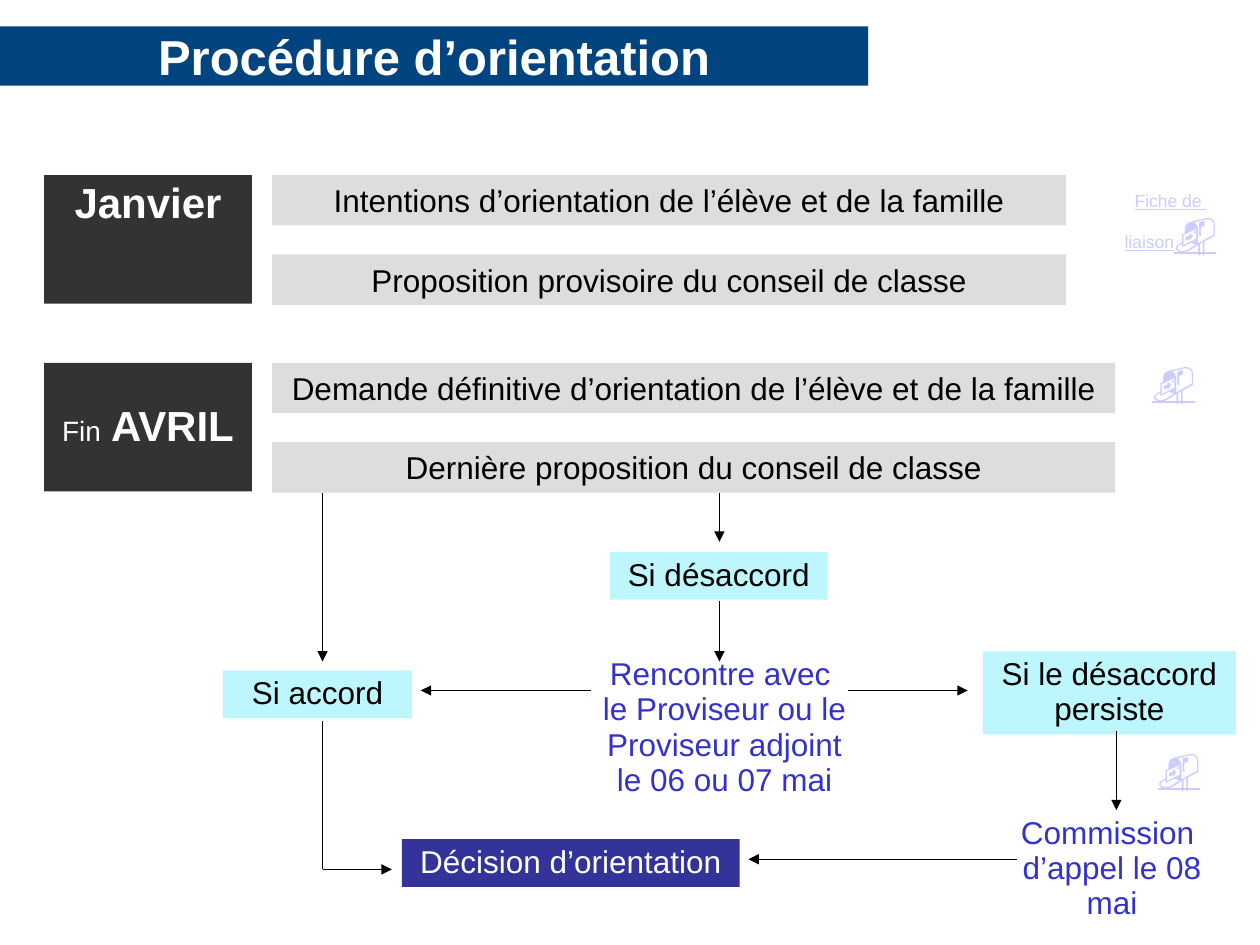
from dataclasses import dataclass
from typing import Optional

import lxml.etree
import pptx
import pptx.dml.color
import pptx.enum.shapes
import pptx.enum.text
import pptx.oxml.ns
import pptx.util

Inches = pptx.util.Inches
Anchor = pptx.enum.text.MSO_ANCHOR


@dataclass(frozen=True)
class Theme:
    font: str = "Arial"
    white: str = "FFFFFF"
    black: str = "000000"
    banner: str = "024480"
    period: str = "333333"
    step: str = "DDDDDD"
    condition: str = "BEF6FE"
    decision: str = "333399"
    meeting: str = "3333CC"
    mail: str = "CCCCFF"
    title_size: int = 28
    large: int = 24
    body: int = 18
    medium: int = 16
    small: int = 10
    line_width: float = 0.75
    tight: float = 0.93


THEME = Theme()


@dataclass(frozen=True)
class Run:
    text: str
    size: int = THEME.body
    color: str = THEME.black
    bold: bool = False
    underline: bool = False


@dataclass(frozen=True)
class Box:
    left: float
    top: float
    width: float
    height: float
    runs: tuple[Run, ...]
    fill: Optional[str] = None
    spacing: float = THEME.tight
    anchor: Anchor = Anchor.TOP


@dataclass(frozen=True)
class Link:
    start: tuple[float, float]
    end: tuple[float, float]
    arrow: bool = True


def rgb(color: str) -> pptx.dml.color.RGBColor:
    return pptx.dml.color.RGBColor.from_string(color)


def write_runs(shape, box: Box) -> None:
    frame = shape.text_frame
    frame.word_wrap = True
    frame.auto_size = pptx.enum.text.MSO_AUTO_SIZE.NONE
    frame.vertical_anchor = box.anchor
    frame.margin_left = frame.margin_right = Inches(0.1)
    frame.margin_top = frame.margin_bottom = Inches(0.05)
    paragraph = frame.paragraphs[0]
    paragraph.alignment = pptx.enum.text.PP_ALIGN.CENTER
    paragraph.line_spacing = box.spacing
    paragraph.space_before = pptx.util.Pt(0)
    for item in box.runs:
        for index, line in enumerate(item.text.split("\n")):
            if index:
                paragraph.add_line_break()
            run = paragraph.add_run()
            run.text = line
            font = run.font
            font.name = THEME.font
            font.size = pptx.util.Pt(item.size)
            font.bold = item.bold
            font.underline = item.underline
            font.color.rgb = rgb(item.color)


def place_title(slide, box: Box) -> None:
    title = slide.shapes.title
    title.left, title.top = Inches(box.left), Inches(box.top)
    title.width, title.height = Inches(box.width), Inches(box.height)
    title.fill.solid()
    title.fill.fore_color.rgb = rgb(box.fill)
    write_runs(title, box)


def draw_box(slide, box: Box) -> None:
    area = [Inches(value) for value in (box.left, box.top, box.width, box.height)]
    if box.fill is None:
        shape = slide.shapes.add_textbox(*area)
    else:
        shape = slide.shapes.add_shape(pptx.enum.shapes.MSO_SHAPE.RECTANGLE, *area)
        shape.shadow.inherit = False
        shape.fill.solid()
        shape.fill.fore_color.rgb = rgb(box.fill)
        shape.line.fill.background()
    write_runs(shape, box)


def draw_link(slide, link: Link) -> None:
    points = [Inches(value) for value in link.start + link.end]
    connector = slide.shapes.add_connector(
        pptx.enum.shapes.MSO_CONNECTOR.STRAIGHT, *points)
    connector.line.color.rgb = rgb(THEME.black)
    connector.line.width = pptx.util.Pt(THEME.line_width)
    if link.arrow:
        lxml.etree.SubElement(connector.line._get_or_add_ln(),
                              pptx.oxml.ns.qn("a:tailEnd"), type="triangle")
    lxml.etree.SubElement(connector._element.spPr, pptx.oxml.ns.qn("a:effectLst"))


def step(top: float, width: float, text: str) -> Box:
    return Box(2.16, top, width, 0.4, (Run(text),), THEME.step, spacing=1.0)


def period(top: float, anchor: Anchor, *runs: Run) -> Box:
    return Box(0.35, top, 1.65, 1.02, runs, THEME.period, anchor=anchor)


def condition(left: float, top: float, width: float, text: str,
              height: float = 0.38) -> Box:
    return Box(left, top, width, height, (Run(text),), THEME.condition)


def meeting(left: float, top: float, width: float, height: float, text: str) -> Box:
    return Box(left, top, width, height, (Run(text, color=THEME.meeting),))


MAILBOX = Run("📬", THEME.large, THEME.mail, underline=True)
JANUARY, APRIL, STEP_GAP = 1.39, 2.88, 0.63
ACCORD_X, DISPUTE_X, APPEAL_X = 2.56, 5.71, 8.86
MEETING_Y, DECISION_Y, APPEAL_Y = 5.48, 6.9, 6.82

TITLE = Box(0, 0.21, 6.89, 0.47,
            (Run("Procédure d’orientation", THEME.title_size, THEME.white, bold=True),),
            THEME.banner, spacing=1.0, anchor=Anchor.MIDDLE)

BOXES = [
    # Periods and their steps
    period(JANUARY, Anchor.TOP, Run("Janvier", THEME.large, THEME.white, bold=True)),
    step(JANUARY, 6.3, "Intentions d’orientation de l’élève et de la famille"),
    step(JANUARY + STEP_GAP, 6.3, "Proposition provisoire du conseil de classe"),
    period(APRIL, Anchor.MIDDLE, Run("Fin", THEME.medium, THEME.white),
           Run(" AVRIL", THEME.large, THEME.white, bold=True)),
    step(APRIL, 6.69, "Demande définitive d’orientation de l’élève et de la famille"),
    step(APRIL + STEP_GAP, 6.69, "Dernière proposition du conseil de classe"),
    # Mail markers
    Box(8.78, 1.47, 1.02, 0.78,
        (Run("Fiche de \nliaison", THEME.small, THEME.mail, underline=True), MAILBOX)),
    Box(8.98, 2.81, 0.67, 0.47, (MAILBOX,)),
    Box(9.02, 5.88, 0.67, 0.47, (MAILBOX,)),
    # Outcomes
    condition(1.77, 5.32, 1.5, "Si accord"),
    condition(4.84, 4.38, 1.73, "Si désaccord"),
    condition(7.8, 5.17, 2.01, "Si le désaccord persiste", height=0.66),
    meeting(4.61, 5.17, 2.28, 1.22,
            "Rencontre avec \nle Proviseur ou le Proviseur adjoint le 06 ou 07 mai"),
    meeting(7.84, 6.43, 1.97, 0.94, "Commission \nd’appel le 08 mai"),
    Box(3.19, 6.66, 2.68, 0.38, (Run("Décision d’orientation", color=THEME.white),),
        THEME.decision),
]

LINKS = [
    Link((ACCORD_X, 3.91), (ACCORD_X, 5.25)),
    Link((ACCORD_X, 5.72), (ACCORD_X, DECISION_Y), arrow=False),
    Link((ACCORD_X, DECISION_Y), (3.11, DECISION_Y)),
    Link((DISPUTE_X, 3.91), (DISPUTE_X, 4.3)),
    Link((DISPUTE_X, 4.77), (DISPUTE_X, 5.25)),
    Link((4.69, MEETING_Y), (3.34, MEETING_Y)),
    Link((6.73, MEETING_Y), (7.68, MEETING_Y)),
    Link((APPEAL_X, 5.8), (APPEAL_X, 6.43)),
    Link((8.07, APPEAL_Y), (5.94, APPEAL_Y)),
]


def main() -> None:
    presentation = pptx.Presentation()
    presentation.slide_width, presentation.slide_height = Inches(10), Inches(7.5)
    slide = presentation.slides.add_slide(presentation.slide_layouts[5])
    place_title(slide, TITLE)
    for box in BOXES:
        draw_box(slide, box)
    for link in LINKS:
        draw_link(slide, link)
    presentation.save("out.pptx")


if __name__ == "__main__":
    main()
